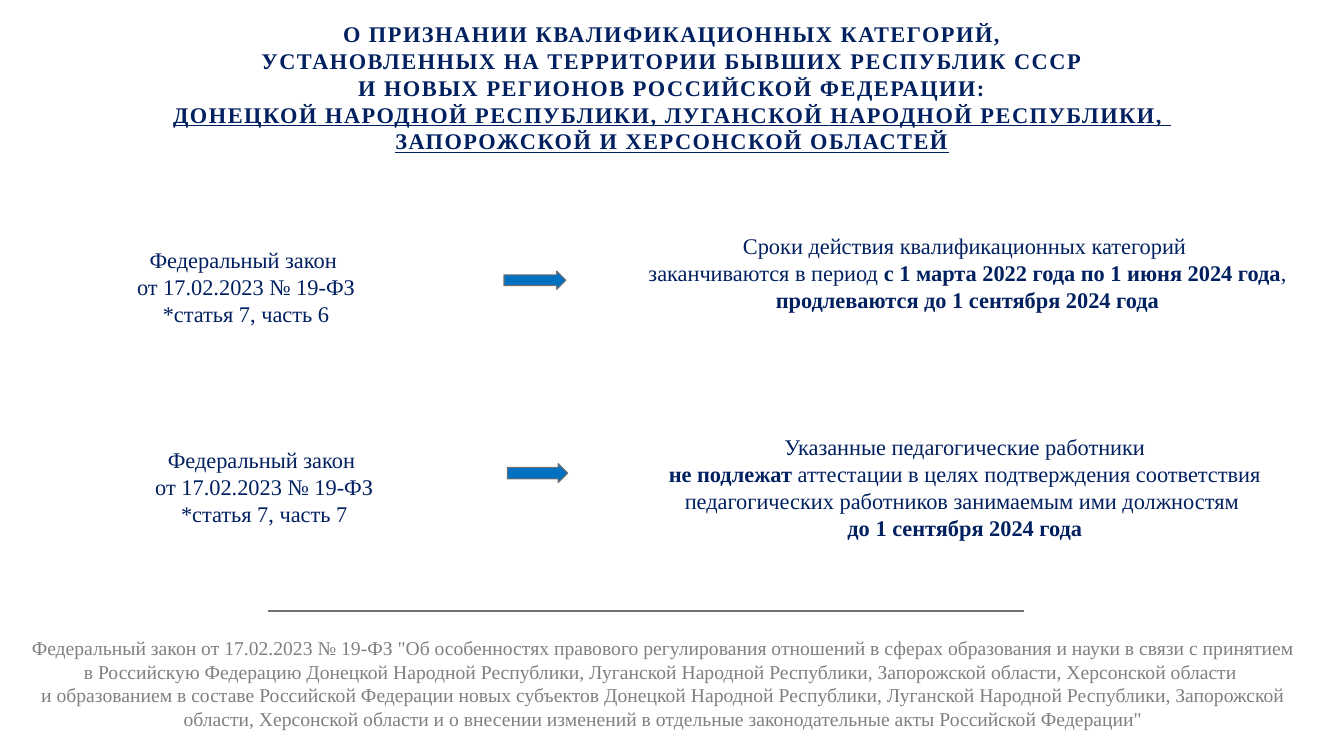
from dataclasses import dataclass

from lxml.etree import SubElement
from pptx import Presentation
from pptx.dml.color import RGBColor
from pptx.enum.shapes import MSO_CONNECTOR, MSO_SHAPE
from pptx.enum.text import MSO_ANCHOR as Anchor, PP_ALIGN as Align
from pptx.oxml.ns import qn
from pptx.shapes.autoshape import Shape
from pptx.slide import Slide
from pptx.text.text import TextFrame
from pptx.util import Emu, Inches, Pt

SLIDE_WIDTH, SLIDE_HEIGHT = Inches(13.33), Inches(7.5)


@dataclass(frozen=True)
class Theme:
    font: str = "Times New Roman"
    navy: RGBColor = RGBColor(0x00, 0x20, 0x60)
    blue: RGBColor = RGBColor(0x00, 0x70, 0xC0)
    rule: RGBColor = RGBColor(0x76, 0x71, 0x71)
    grey: RGBColor = RGBColor(0x80, 0x80, 0x80)
    white: RGBColor = RGBColor(0xFF, 0xFF, 0xFF)
    body_size: Pt = Pt(16)
    footnote_size: Pt = Pt(14)
    title_spacing: str = "110"


THEME = Theme()


@dataclass(frozen=True)
class Area:
    """A rectangle in percent of the slide's width and height."""
    left: float
    top: float
    width: float
    height: float

    def box(self) -> tuple[Emu, Emu, Emu, Emu]:
        return (across(self.left), down(self.top),
                across(self.width), down(self.height))


@dataclass(frozen=True)
class Phrase:
    text: str
    bold: bool = False
    underline: bool = False


Line = tuple[Phrase, ...]


@dataclass(frozen=True)
class Card:
    area: Area
    lines: tuple[Line, ...]
    bottom_inset: float = 0.05


@dataclass(frozen=True)
class Provision:
    """A clause of the law, an arrow and what follows from the clause."""
    clause: Card
    arrow: Area
    effect: Card


def across(percent: float) -> Emu:
    return Emu(round(SLIDE_WIDTH * percent / 100))


def down(percent: float) -> Emu:
    return Emu(round(SLIDE_HEIGHT * percent / 100))


def law_clause(part: int) -> tuple[Line, ...]:
    return ((Phrase("Федеральный закон "),),
            (Phrase("от 17.02.2023 № 19-ФЗ"),),
            (Phrase(f"*статья 7, часть {part}"),))


TITLE_AREA = Area(0, 2, 100, 19.07)
TITLE = (
    (Phrase("О ПРИЗНАНИИ КВАЛИФИКАЦИОННЫХ КАТЕГОРИЙ,", True),),
    (Phrase("УСТАНОВЛЕННЫХ НА ТЕРРИТОРИИ БЫВШИХ РЕСПУБЛИК СССР", True),),
    (Phrase("И НОВЫХ РЕГИОНОВ РОССИЙСКОЙ ФЕДЕРАЦИИ:", True),),
    (Phrase("ДОНЕЦКОЙ НАРОДНОЙ РЕСПУБЛИКИ, ЛУГАНСКОЙ НАРОДНОЙ РЕСПУБЛИКИ, ",
            True, True),),
    (Phrase("ЗАПОРОЖСКОЙ И ХЕРСОНСКОЙ ОБЛАСТЕЙ", True, True),),
)

PROVISIONS = (
    Provision(
        Card(Area(1.2, 23.47, 34.21, 28.8), law_clause(6)),
        Area(37.5, 35.87, 4.6, 2.4),
        Card(Area(47.19, 23.47, 49.59, 28.8), (
            (Phrase("Сроки действия квалификационных категорий "),),
            (Phrase("заканчиваются в период "),
             Phrase("с 1 марта 2022 года по 1 июня 2024 года", True),
             Phrase(",")),
            (Phrase("продлеваются до 1 сентября 2024 года", True),),
        ), bottom_inset=0.32),
    ),
    Provision(
        Card(Area(3.08, 48, 33.16, 32.8), law_clause(7)),
        Area(37.75, 61.33, 4.5, 2.53),
        Card(Area(47.71, 48, 48.16, 32.8), (
            (Phrase("Указанные педагогические работники"),),
            (Phrase("не подлежат ", True),
             Phrase("аттестации в целях подтверждения соответствия "
                    "педагогических работников занимаемым ими должностям ")),
            (Phrase("до 1 сентября 2024 года", True),),
        )),
    ),
)

FOOTNOTE_AREA = Area(1.2, 83.47, 96.32, 13.87)
FOOTNOTE = (
    (Phrase("Федеральный закон от 17.02.2023 № 19-ФЗ \"Об особенностях "
            "правового регулирования отношений в сферах образования и науки "
            "в связи с принятием в Российскую Федерацию Донецкой Народной "
            "Республики, Луганской Народной Республики, Запорожской области, "
            "Херсонской области "),),
    (Phrase("и образованием в составе Российской Федерации новых субъектов "
            "Донецкой Народной Республики, Луганской Народной Республики, "
            "Запорожской области, Херсонской области и о внесении изменений "
            "в отдельные законодательные акты Российской Федерации\""),),
)


def write(frame: TextFrame, lines: tuple[Line, ...], size: Pt,
          color: RGBColor, spacing: str = "0") -> None:
    """Fill the frame with centred lines; spacing is in hundredths of a point."""
    frame.word_wrap = True
    for index, line in enumerate(lines):
        paragraph = frame.add_paragraph() if index else frame.paragraphs[0]
        paragraph.alignment = Align.CENTER
        for phrase in line:
            run = paragraph.add_run()
            run.text = phrase.text
            font = run.font
            font.name, font.size = THEME.font, size
            font.bold, font.underline = phrase.bold, phrase.underline
            font.color.rgb = color
            run._r.get_or_add_rPr().set("spc", spacing)


def add_figure(slide: Slide, kind: MSO_SHAPE, area: Area, fill: RGBColor,
               outline: RGBColor, outline_width: float) -> Shape:
    figure = slide.shapes.add_shape(kind, *area.box())
    figure.shadow.inherit = False
    figure.fill.solid()
    figure.fill.fore_color.rgb = fill
    figure.line.color.rgb = outline
    figure.line.width = Pt(outline_width)
    return figure


def add_card(slide: Slide, card: Card) -> None:
    panel = add_figure(slide, MSO_SHAPE.ROUNDED_RECTANGLE, card.area,
                       THEME.white, THEME.white, 1)
    panel.adjustments[0] = 0.1
    frame = panel.text_frame
    frame.margin_left = frame.margin_right = frame.margin_top = Inches(0.05)
    frame.margin_bottom = Inches(card.bottom_inset)
    frame.vertical_anchor = Anchor.MIDDLE
    write(frame, card.lines, THEME.body_size, THEME.navy)


def add_provision(slide: Slide, provision: Provision) -> None:
    add_card(slide, provision.clause)
    arrow = add_figure(slide, MSO_SHAPE.RIGHT_ARROW, provision.arrow,
                       THEME.blue, THEME.rule, 0.75)
    arrow.adjustments[0] = 0.6
    add_card(slide, provision.effect)


def add_footnote_rule(slide: Slide) -> None:
    height = down(80.8)
    rule = slide.shapes.add_connector(MSO_CONNECTOR.STRAIGHT, across(19.95),
                                      height, across(76.22), height)
    rule.line.color.rgb = THEME.rule
    rule.line.width = Pt(1)
    SubElement(rule._element.spPr, qn("a:effectLst"))


def main() -> None:
    deck = Presentation()
    deck.slide_width, deck.slide_height = SLIDE_WIDTH, SLIDE_HEIGHT
    slide = deck.slides.add_slide(deck.slide_layouts[6])

    title = slide.shapes.add_textbox(*TITLE_AREA.box()).text_frame
    title.vertical_anchor = Anchor.MIDDLE
    write(title, TITLE, THEME.body_size, THEME.navy, THEME.title_spacing)
    for provision in PROVISIONS:
        add_provision(slide, provision)
    footnote = slide.shapes.add_textbox(*FOOTNOTE_AREA.box()).text_frame
    write(footnote, FOOTNOTE, THEME.footnote_size, THEME.grey)
    add_footnote_rule(slide)
    deck.save("out.pptx")


if __name__ == "__main__":
    main()
